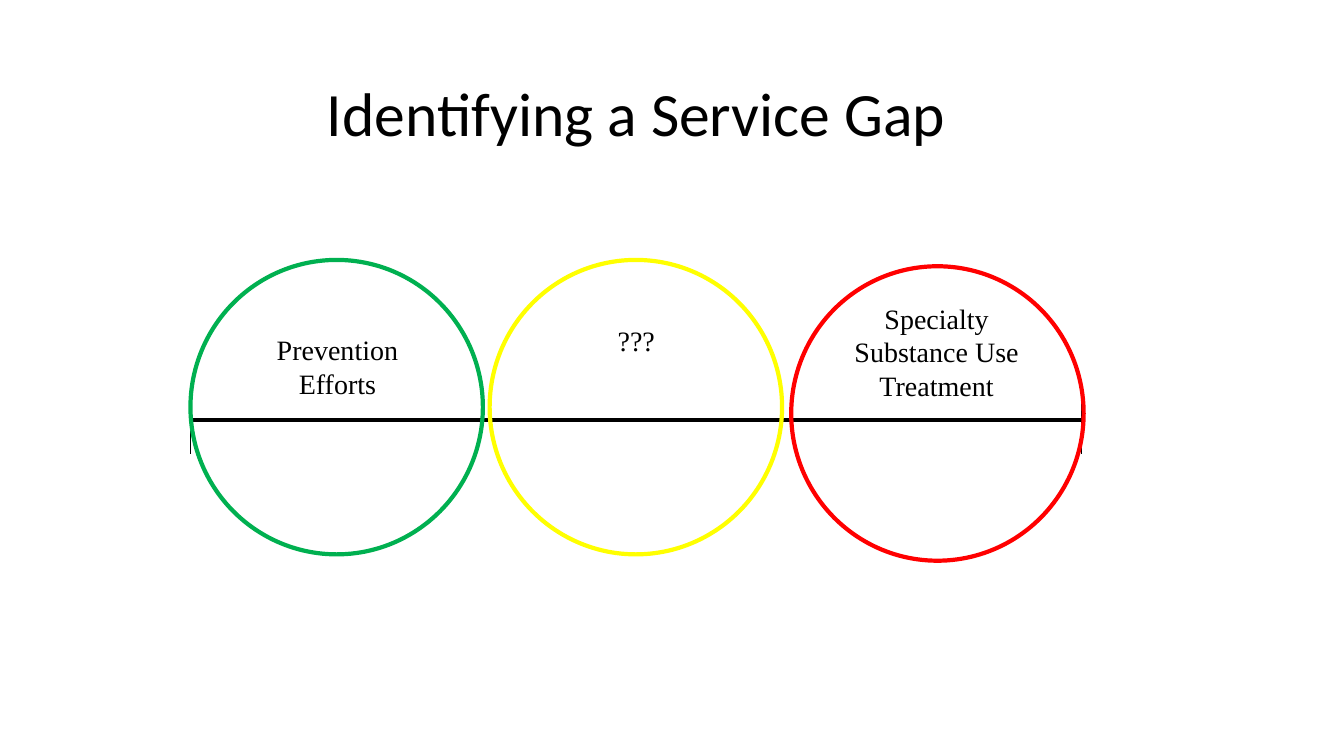
from dataclasses import dataclass

from lxml import etree
from pptx import Presentation
from pptx import util as u
from pptx.dml.color import RGBColor
from pptx.enum import shapes, text
from pptx.oxml.ns import qn

HUES = {"ink": "000000", "green": "00B050", "yellow": "FFFF00", "red": "FF0000"}
WIDE, HIGH = 7.37, 7.42  # ring size
LEFT, RIGHT, AXIS = 4.8, 27.25, 10.59
TICK = 0.85  # half length


@dataclass
class Ring:
    x: float
    y: float
    hue: str


@dataclass
class Label:
    words: str
    x: float
    y: float
    w: float
    h: float


@dataclass
class Rule:
    x1: float
    y1: float
    x2: float
    y2: float
    size: float


RULES = [Rule(LEFT, AXIS, RIGHT, AXIS, 3)] + [
    Rule(x, AXIS - TICK, x, AXIS + TICK, 0.75) for x in (LEFT, RIGHT)
]
RINGS = [
    Ring(LEFT, 6.55, "green"),
    Ring(19.94, 6.71, "red"),
    Ring(12.34, 6.55, "yellow"),
]
LABELS = [
    Label("Prevention Efforts", 6.5, 8.26, 4.01, 1.96),
    Label("Specialty Substance Use Treatment", 20.8, 7.47, 5.61, 2.82),
    Label("???", 13.23, 8.03, 5.61, 1.12),
]


def tint(name: str) -> RGBColor:
    return RGBColor.from_string(HUES[name])


def style(item, form: dict) -> None:
    for key, value in form.items():
        setattr(item, key, value)


def write(box, words: str, font: str, size: float, lead: float) -> None:
    box.text_frame.text = words
    box.text_frame.word_wrap = True
    par = box.text_frame.paragraphs[0]
    style(par, {"alignment": text.PP_ALIGN.CENTER, "line_spacing": lead})
    style(par.runs[0].font, {"name": font, "size": u.Pt(size)})
    par.runs[0].font.color.rgb = tint("ink")


def draw_rule(slide, rule: Rule) -> None:
    ends = [u.Cm(n) for n in (rule.x1, rule.y1, rule.x2, rule.y2)]
    line = slide.shapes.add_connector(shapes.MSO_CONNECTOR.STRAIGHT, *ends)
    line.line.color.rgb = tint("ink")
    line.line.width = u.Pt(rule.size)
    etree.SubElement(line._element.spPr, qn("a:effectLst"))


def draw_ring(slide, ring: Ring) -> None:
    area = [u.Cm(n) for n in (ring.x, ring.y, WIDE, HIGH)]
    oval = slide.shapes.add_shape(shapes.MSO_SHAPE.OVAL, *area)
    oval.shadow.inherit = False
    oval.fill.background()
    oval.line.color.rgb = tint(ring.hue)
    oval.line.width = u.Pt(3)


def draw_label(slide, label: Label) -> None:
    area = [u.Cm(n) for n in (label.x, label.y, label.w, label.h)]
    box = slide.shapes.add_textbox(*area)
    write(box, label.words, "Times New Roman", 20, 1.0)
    box.text_frame.auto_size = text.MSO_AUTO_SIZE.SHAPE_TO_FIT_TEXT


def main() -> None:
    deck = Presentation()
    style(deck, {"slide_width": u.Cm(33.87), "slide_height": u.Cm(19.05)})
    slide = deck.slides.add_slide(deck.slide_layouts[5])

    # Title
    title = slide.shapes.title
    style(title, {"left": u.Cm(LEFT), "top": u.Cm(1.09),
                  "width": u.Cm(22.48), "height": u.Cm(3.68)})
    write(title, "Identifying a Service Gap", "Calibri", 44, 0.9)
    title.text_frame.vertical_anchor = text.MSO_ANCHOR.MIDDLE

    # Axis with its end ticks
    for rule in RULES:
        draw_rule(slide, rule)

    # Service areas and their names
    for ring in RINGS:
        draw_ring(slide, ring)
    for label in LABELS:
        draw_label(slide, label)

    deck.save("out.pptx")


if __name__ == "__main__":
    main()
